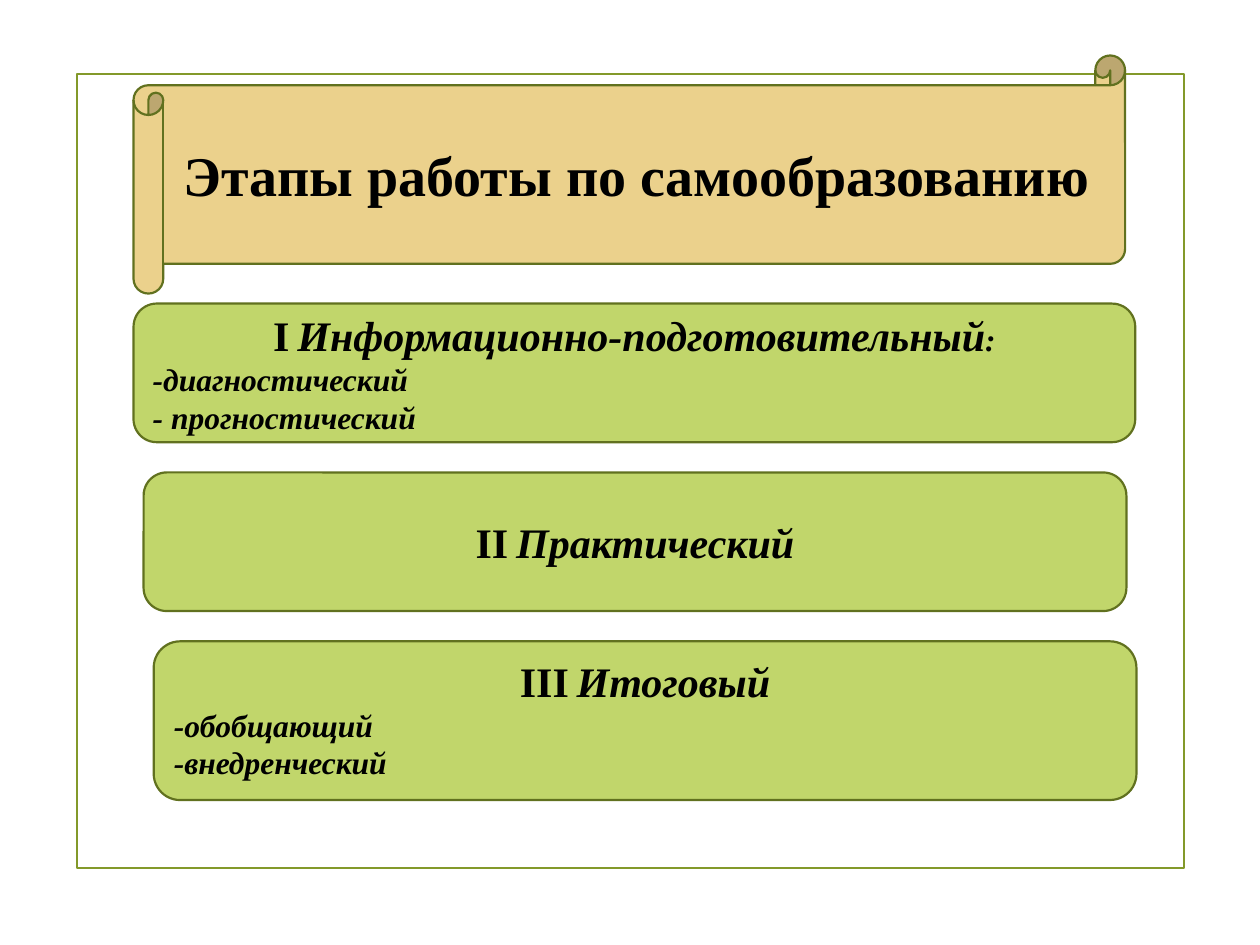
from pptx import Presentation
from pptx.dml.color import RGBColor
from pptx.enum.shapes import MSO_SHAPE
from pptx.enum.text import MSO_ANCHOR, PP_ALIGN
from pptx.util import Inches, Pt

FONT = "Times New Roman"
INK, OUTLINE, FRAME = "000000", "61711F", "83992A"
SCROLL_FILL, STAGE_FILL = "EBD18C", "C1D66B"
EM_SPACE = " "

# Box (left, top, width, height), numeral, name, name ending, steps, anchor
STAGES = [
    ((1.06, 2.41, 7.95, 1.1), "I", "Информационно-подготовительный", ":",
     ["-диагностический", "- прогностический"], MSO_ANCHOR.MIDDLE),
    ((1.14, 3.75, 7.8, 1.1), "II", "Практический", "", [], MSO_ANCHOR.MIDDLE),
    ((1.22, 5.09, 7.8, 1.26), "III", "Итоговый", "",
     ["-обобщающий", "-внедренческий"], MSO_ANCHOR.TOP),
]


def color(value):
    return RGBColor.from_string(value)


def add_panel(slide, kind, box, fill=None, line=OUTLINE, anchor=MSO_ANCHOR.MIDDLE):
    shape = slide.shapes.add_shape(kind, *(Inches(length) for length in box))
    shape.shadow.inherit = False
    if fill:
        shape.fill.solid()
        shape.fill.fore_color.rgb = color(fill)
    else:
        shape.fill.background()
    shape.line.color.rgb = color(line)
    shape.line.width = Pt(1.25)
    shape.text_frame.word_wrap = True
    shape.text_frame.vertical_anchor = anchor
    return shape


def add_text(paragraph, text, size=18, italic=False, align=PP_ALIGN.LEFT):
    paragraph.alignment = align
    run = paragraph.add_run()
    run.text = text
    run.font.name = FONT
    run.font.size = Pt(size)
    run.font.bold = True
    run.font.italic = italic
    run.font.color.rgb = color(INK)


def add_frame(slide, box):
    add_panel(slide, MSO_SHAPE.RECTANGLE, box, line=FRAME)


def add_title_scroll(slide, box, title):
    scroll = add_panel(slide, MSO_SHAPE.HORIZONTAL_SCROLL, box, SCROLL_FILL)
    add_text(scroll.text_frame.paragraphs[0], title, size=32, align=PP_ALIGN.CENTER)


def add_stage(slide, box, numeral, name, ending, steps, anchor):
    panel = add_panel(slide, MSO_SHAPE.ROUNDED_RECTANGLE, box, STAGE_FILL, anchor=anchor)
    frame = panel.text_frame

    # Heading: numeral, gap, stage name
    heading = frame.paragraphs[0]
    center = PP_ALIGN.CENTER
    add_text(heading, numeral, size=24, align=center)
    add_text(heading, EM_SPACE, align=center)
    add_text(heading, name, size=24, italic=True, align=center)
    if ending:
        add_text(heading, ending, italic=True, align=center)

    # Steps within the stage
    for step in steps:
        add_text(frame.add_paragraph(), step, italic=True)


def main():
    presentation = Presentation()
    presentation.slide_width = Inches(10)
    presentation.slide_height = Inches(7.5)
    slide = presentation.slides.add_slide(presentation.slide_layouts[6])

    add_frame(slide, (0.61, 0.59, 8.79, 6.3))
    add_title_scroll(slide, (1.06, 0.44, 7.87, 1.89), "Этапы работы по самообразованию")
    for stage in STAGES:
        add_stage(slide, *stage)

    presentation.save("out.pptx")


if __name__ == "__main__":
    main()
